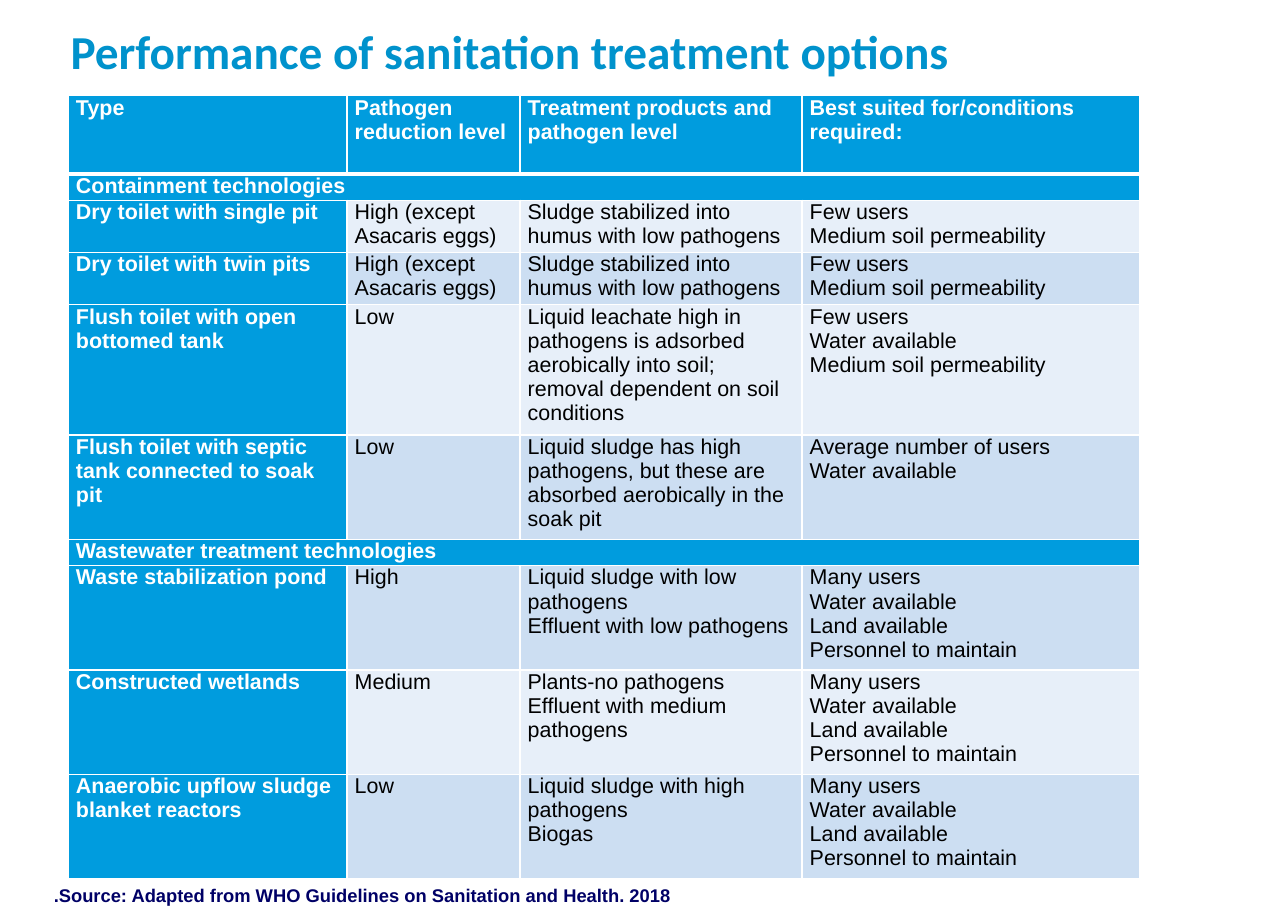
from dataclasses import dataclass

from lxml.etree import SubElement
from pptx import Presentation
from pptx.dml.color import RGBColor
from pptx.enum.text import MSO_ANCHOR as Anchor, PP_ALIGN as Align
from pptx.oxml.ns import qn
from pptx.util import Inches, Pt

TITLE = "Performance of sanitation treatment options"
SOURCE = ".Source: Adapted from WHO Guidelines on Sanitation and Health. 2018"

# Each row: height in text lines, then its cells; a single cell spans the table.
SOIL_USERS = "Few users\nMedium soil permeability"
MANAGED_SITE = "Many users\nWater available\nLand available\nPersonnel to maintain"
HUMUS = "Sludge stabilized into humus with low pathogens"
EXCEPT_EGGS = "High (except Asacaris eggs)"
ROWS = [
    (3, ["Type", "Pathogen\nreduction level", "Treatment products and pathogen level",
         "Best suited for/conditions required:"]),
    (1, ["Containment technologies"]),
    (2, ["Dry toilet with single pit", EXCEPT_EGGS, HUMUS, SOIL_USERS]),
    (2, ["Dry toilet with twin pits", EXCEPT_EGGS, HUMUS, SOIL_USERS]),
    (5, ["Flush toilet with open bottomed tank", "Low",
         "Liquid leachate high in pathogens is adsorbed aerobically into soil; "
         "removal dependent on soil conditions",
         "Few users\nWater available\nMedium soil permeability"]),
    (4, ["Flush toilet with septic tank connected to soak pit", "Low",
         "Liquid sludge has high pathogens, but these are absorbed aerobically in the soak pit",
         "Average number of users\nWater available"]),
    (1, ["Wastewater treatment technologies"]),
    (4, ["Waste stabilization pond", "High",
         "Liquid sludge with low pathogens\nEffluent with low pathogens", MANAGED_SITE]),
    (4, ["Constructed wetlands", "Medium",
         "Plants-no pathogens\nEffluent with medium pathogens", MANAGED_SITE]),
    (4, ["Anaerobic upflow sludge blanket reactors", "Low",
         "Liquid sludge with high pathogens\nBiogas", MANAGED_SITE]),
]
COLUMN_WIDTHS = [2.53, 1.57, 2.56, 3.06]
SLIDE_SIZE = (11.69, 8.27)
LEFT, TABLE_TOP, TABLE_HEIGHT = 0.62, 0.87, 7.11
TABLE_WIDTH = sum(COLUMN_WIDTHS)


@dataclass(frozen=True)
class Theme:
    title: str = "0092CC"
    heading: str = "009CDE"
    stripes: tuple = ("E7EFF9", "CCDEF2")
    white: str = "FFFFFF"
    black: str = "000000"
    source: str = "000066"
    title_font: str = "Calibri"
    body_font: str = "Arial"
    title_size: float = 30.9
    body_size: float = 14
    source_size: float = 12


THEME = Theme()


def write(text_frame, text, font_name, size, color, bold):
    text_frame.word_wrap = True
    text_frame.text = text
    for paragraph in text_frame.paragraphs:
        paragraph.alignment = Align.LEFT
        for run in paragraph.runs:
            font = run.font
            font.name, font.size, font.bold = font_name, Pt(size), bold
            font.color.rgb = RGBColor.from_string(color)


def set_borders(cell, top, bottom):
    """White cell lines; top and bottom are widths in points."""
    properties = cell._tc.get_or_add_tcPr()
    for side, width in (("L", 1), ("R", 1), ("T", top), ("B", bottom)):
        line = SubElement(properties, qn(f"a:ln{side}"), w=str(Pt(width)))
        fill = SubElement(line, qn("a:solidFill"))
        SubElement(fill, qn("a:srgbClr"), val=THEME.white)


def style_cell(cell, row, is_heading):
    set_borders(cell, top=3 if row == 1 else 1, bottom=3 if row == 0 else 1)
    cell.margin_left = cell.margin_right = Inches(0.07)
    cell.margin_top = cell.margin_bottom = 0
    cell.fill.solid()
    color = THEME.heading if is_heading else THEME.stripes[row % 2]
    cell.fill.fore_color.rgb = RGBColor.from_string(color)


def add_options_table(slide):
    box = map(Inches, (LEFT, TABLE_TOP, TABLE_WIDTH, TABLE_HEIGHT))
    table = slide.shapes.add_table(len(ROWS), len(COLUMN_WIDTHS), *box).table
    for column, width in zip(table.columns, COLUMN_WIDTHS):
        column.width = Inches(width)
    line_height = TABLE_HEIGHT / sum(lines for lines, _ in ROWS)
    for row, (lines, texts) in enumerate(ROWS):
        table.rows[row].height = Inches(lines * line_height)
        is_band = len(texts) == 1
        for column in range(len(COLUMN_WIDTHS)):
            is_heading = row == 0 or column == 0 or is_band
            cell = table.cell(row, column)
            style_cell(cell, row, is_heading)
            if column < len(texts):
                write(cell.text_frame, texts[column], THEME.body_font, THEME.body_size,
                      THEME.white if is_heading else THEME.black, is_heading)
        if is_band:
            table.cell(row, 0).merge(table.cell(row, len(COLUMN_WIDTHS) - 1))


def main():
    presentation = Presentation()
    presentation.slide_width, presentation.slide_height = map(Inches, SLIDE_SIZE)
    slide = presentation.slides.add_slide(presentation.slide_layouts[6])

    title = slide.shapes.add_textbox(*map(Inches, (LEFT, -0.15, TABLE_WIDTH, 0.87))).text_frame
    write(title, TITLE, THEME.title_font, THEME.title_size, THEME.title, True)
    title.vertical_anchor = Anchor.BOTTOM
    title.margin_left, title.margin_right = Inches(0.02), Inches(0.39)
    title.margin_top = title.margin_bottom = 0
    title.paragraphs[0].line_spacing = 0.9

    add_options_table(slide)

    source_top = TABLE_TOP + TABLE_HEIGHT
    source = slide.shapes.add_textbox(*map(Inches, (0.39, source_top, 8.77, 0.3))).text_frame
    write(source, SOURCE, THEME.body_font, THEME.source_size, THEME.source, True)

    presentation.save("out.pptx")


if __name__ == "__main__":
    main()
